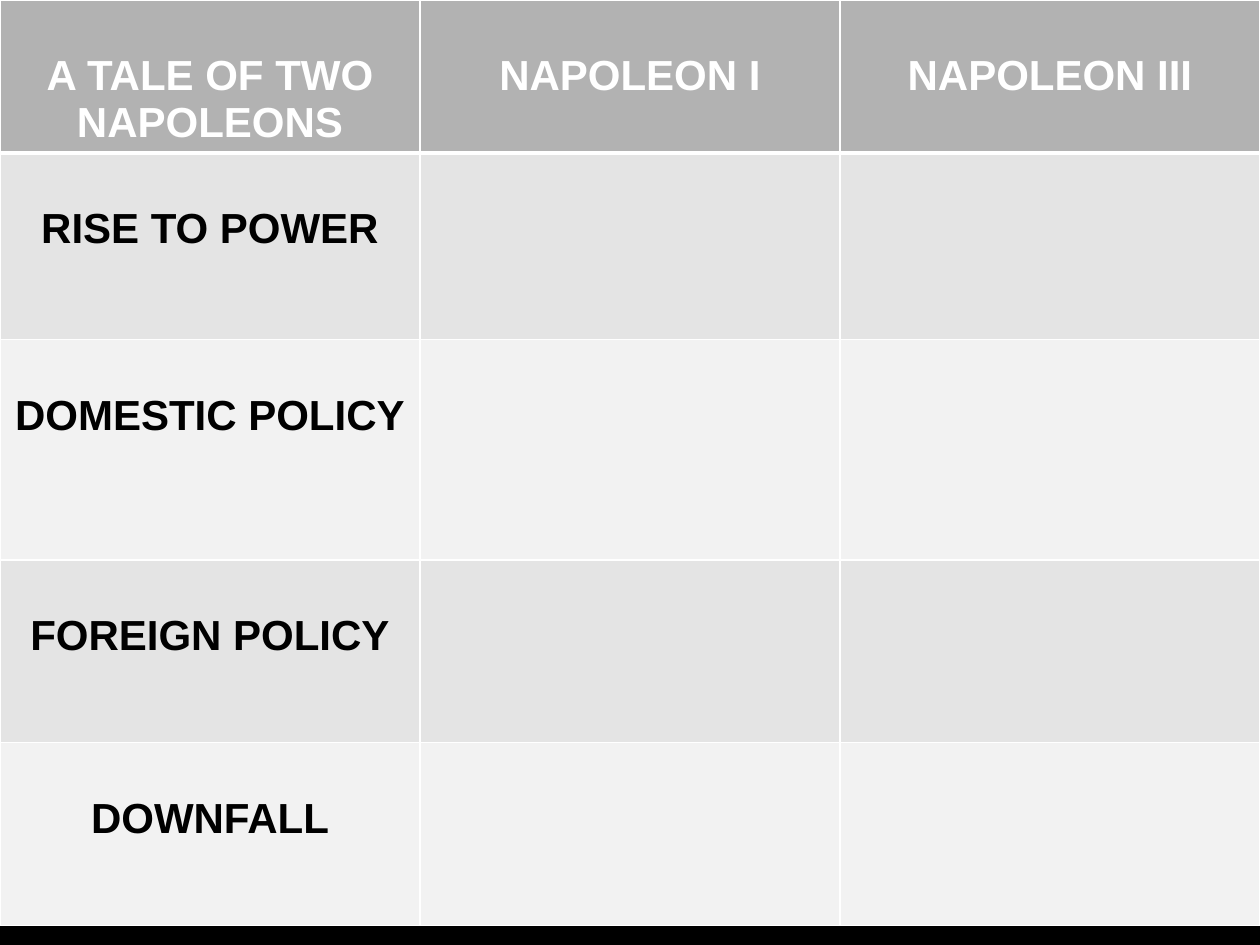
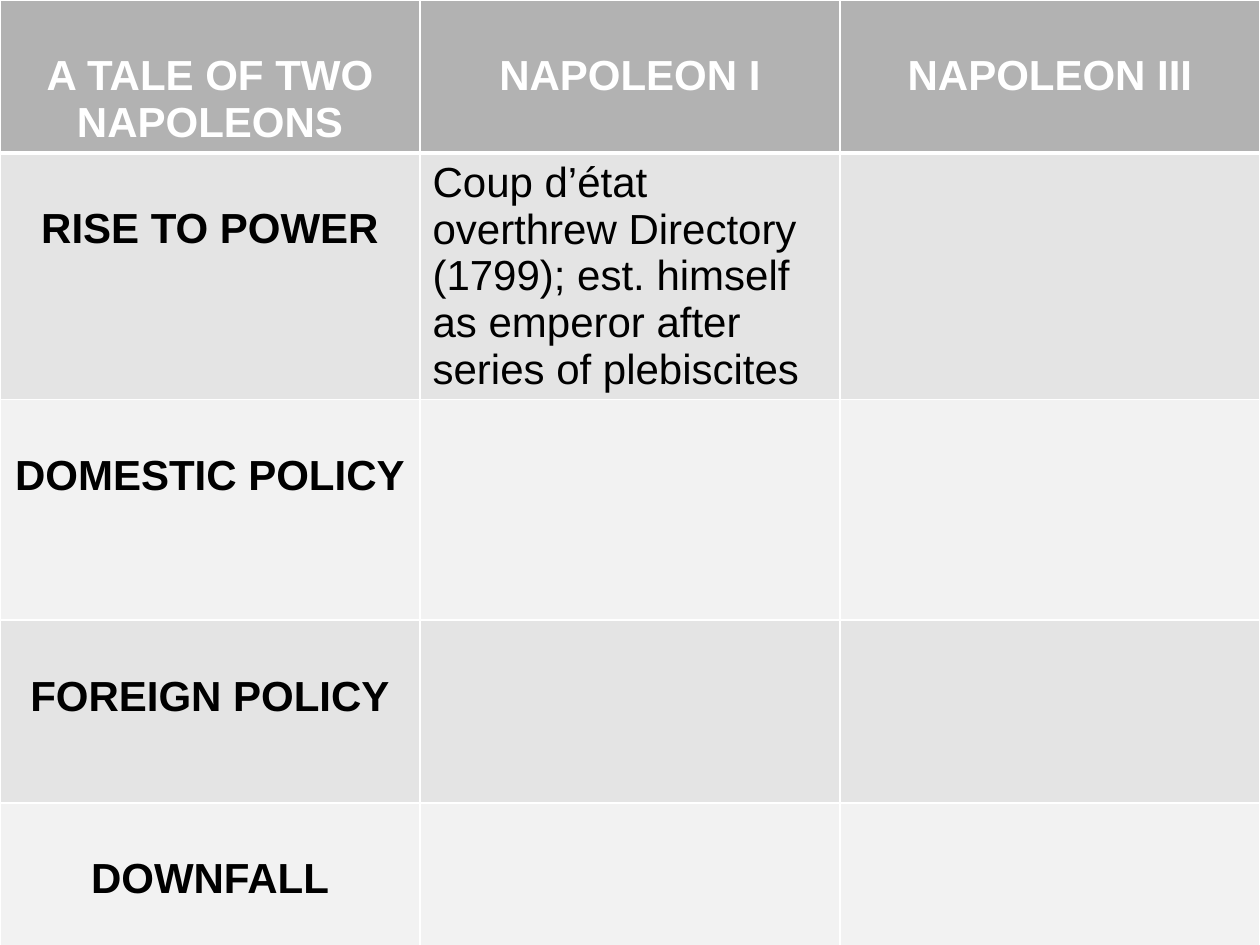
from lxml.etree import SubElement
from pptx import Presentation
from pptx.dml.color import RGBColor
from pptx.enum.text import PP_ALIGN
from pptx.oxml.ns import qn
from pptx.util import Inches, Pt

COLORS = {
    "background": "000000",
    "header": "B2B2B2",
    "odd_row": "E4E4E4",
    "even_row": "F2F2F2",
    "border": "FFFFFF",
    "header_text": "FFFFFF",
    "body_text": "000000",
}
FONT = "Arial"
TEXT_SIZE = 24
LABEL_TOP = 0.42
ROW_HEIGHTS = [1.13, 1.48, 1.75, 1.45, 1.45]
HEADINGS = ["A TALE OF TWO NAPOLEONS", "NAPOLEON I", "NAPOLEON III"]
TOPICS = ["RISE TO POWER", "DOMESTIC POLICY", "FOREIGN POLICY", "DOWNFALL"]
COUP = ("Coup d’état overthrew Directory (1799); est. himself "
        "as emperor after series of plebiscites")


def color(name):
    """Return the named palette colour."""
    return RGBColor.from_string(COLORS[name])


def set_borders(cell, top, bottom):
    """Draw the four cell borders, with the given top and bottom widths in points."""
    properties = cell._tc.get_or_add_tcPr()
    for side, width in (("L", 1), ("R", 1), ("T", top), ("B", bottom)):
        line = SubElement(properties, qn(f"a:ln{side}"), w=str(Pt(width)))
        fill = SubElement(line, qn("a:solidFill"))
        SubElement(fill, qn("a:srgbClr"), val=COLORS["border"])


def write_cell(cell, text, text_color, is_label):
    """Write a centred bold label, or a plain left-aligned note."""
    cell.text_frame.text = text
    para = cell.text_frame.paragraphs[0]
    para.alignment = PP_ALIGN.CENTER if is_label else PP_ALIGN.LEFT
    if is_label:
        cell.margin_top = Inches(LABEL_TOP)
    for span in para.runs:
        span.font.name = FONT
        span.font.size = Pt(TEXT_SIZE)
        span.font.bold = is_label
        span.font.color.rgb = color(text_color)


def add_comparison(page, box, notes):
    """Fill the box with the comparison table, with notes keyed by row and column."""
    left, top, width, height = (Inches(length) for length in box)
    table = page.shapes.add_table(
        len(TOPICS) + 1, len(HEADINGS), left, top, width, height).table
    for row, row_height in enumerate(ROW_HEIGHTS):
        table.rows[row].height = Inches(row_height)
        is_header = row == 0
        fill_color = "header" if is_header else "odd_row" if row % 2 else "even_row"
        text_color = "header_text" if is_header else "body_text"
        for column, heading in enumerate(HEADINGS):
            cell = table.cell(row, column)
            set_borders(cell, 3 if row == 1 else 1, 3 if is_header else 1)
            cell.fill.solid()
            cell.fill.fore_color.rgb = color(fill_color)
            if is_header:
                write_cell(cell, heading, text_color, True)
            elif column == 0:
                write_cell(cell, TOPICS[row - 1], text_color, True)
            elif (row, column) in notes:
                write_cell(cell, notes[row, column], text_color, False)


def add_page(deck, notes):
    """Add a black slide that holds the comparison table."""
    page = deck.slides.add_slide(deck.slide_layouts[6])
    page.background.fill.solid()
    page.background.fill.fore_color.rgb = color("background")
    add_comparison(page, (0, 0, 10, sum(ROW_HEIGHTS)), notes)


def main():
    """Build and save the deck."""
    deck = Presentation()
    deck.slide_width, deck.slide_height = Inches(10), Inches(7.5)
    for notes in ({}, {(1, 1): COUP}):
        add_page(deck, notes)
    deck.save("out.pptx")


if __name__ == "__main__":
    main()
